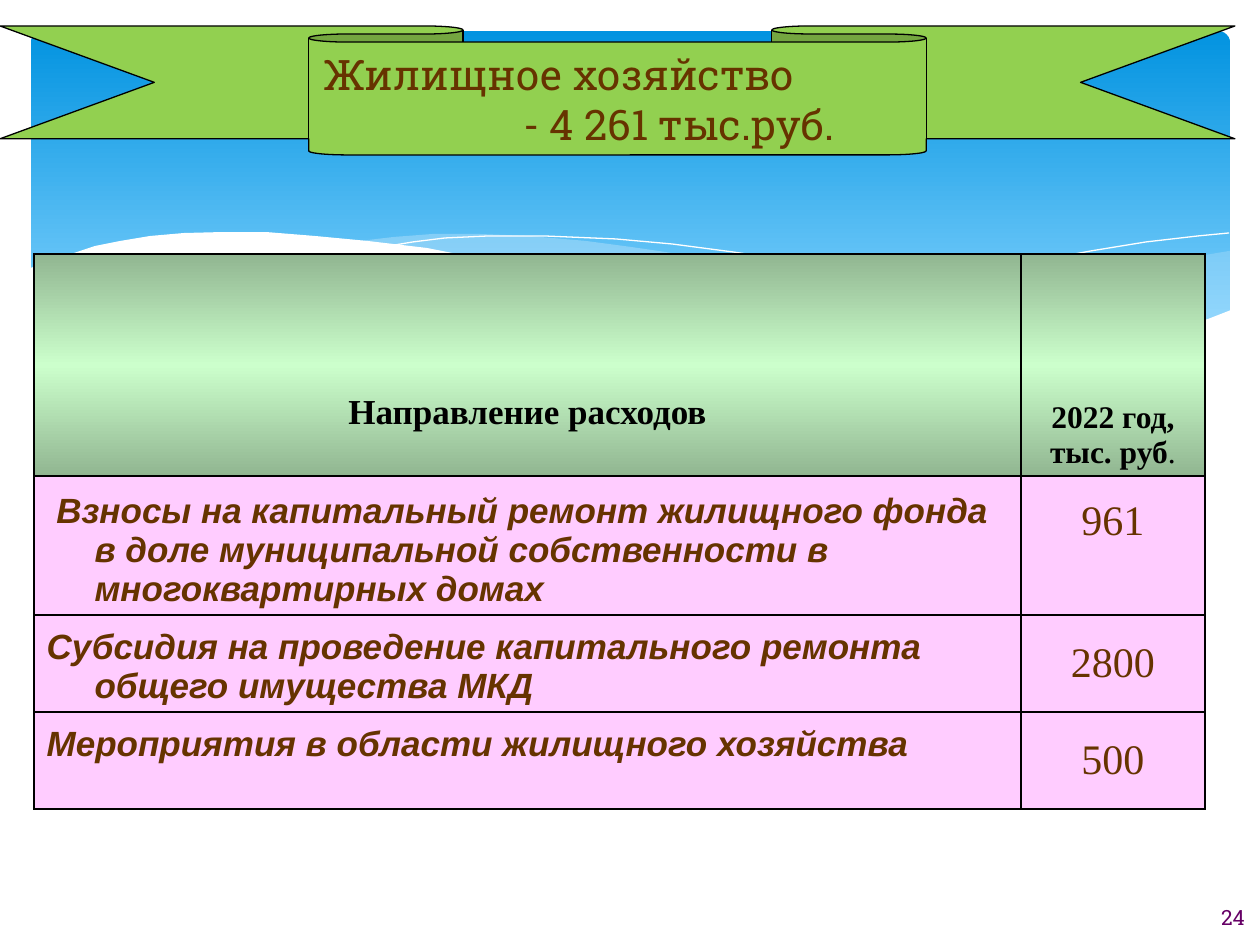
from dataclasses import dataclass

from lxml import etree
from pptx import Presentation
from pptx import util as u
from pptx.dml.color import RGBColor
from pptx.enum import shapes, text
from pptx.oxml import ns

SCALE = 914400 / 126
LEFT, MID = text.PP_ALIGN.LEFT, text.PP_ALIGN.CENTER
LOW, CORE = text.MSO_ANCHOR.BOTTOM, text.MSO_ANCHOR.MIDDLE


@dataclass(frozen=True)
class Theme:
    sky: str = "0293E0"
    pale: str = "83D3FE"
    mist: str = "C6E7FC"
    white: str = "FFFFFF"
    black: str = "000000"
    green: str = "92D050"
    mint: str = "CCFFCC"
    pink: str = "FFCCFF"
    brown: str = "663300"
    plum: str = "660066"
    slab: str = "Roboto Slab"
    serif: str = "Times New Roman"
    sans: str = "Arial"
    big: int = 24
    body: int = 20
    small: int = 18
    tiny: int = 12


def px(n):
    return u.Emu(round(n * SCALE))


def rgb(code):
    return RGBColor.from_string(code)


def node(root, tag, **attrs):
    return etree.SubElement(root, ns.qn(tag), {k: str(v) for k, v in attrs.items()})


def tint(root, code, **mods):
    color = node(root, "a:srgbClr", val=code)
    for name, val in mods.items():
        node(color, "a:" + name, val=val)


def blend(fill, root, stops):
    fill.background()
    old = root.find(ns.qn("a:noFill"))
    grad = etree.Element(ns.qn("a:gradFill"), rotWithShape="1")
    marks = node(grad, "a:gsLst")
    for pos, code, mods in stops:
        tint(node(marks, "a:gs", pos=pos * 1000), code, **mods)
    node(grad, "a:lin", ang=5400000, scaled=0)
    root.replace(old, grad)


def write(frame, words, size, font, color, bold=False, slant=False,
          align=MID, hang=48, inset=0):
    for i, line in enumerate(words.split("\n")):
        para = frame.paragraphs[0] if i == 0 else frame.add_paragraph()
        para.alignment = align
        props = para._p.get_or_add_pPr()
        props.set("marL", str(px(hang + inset)))
        props.set("indent", str(px(-hang)))
        para.text = line
        for run in para.runs:
            face = run.font
            face.size, face.name = u.Pt(size), font
            face.bold, face.italic = bold, slant
            face.color.rgb = rgb(color)


class Deck:
    def __init__(self, theme):
        self.theme = theme
        self.file = Presentation()
        self.file.slide_width, self.file.slide_height = px(1260), px(945)
        self.slide = self.file.slides.add_slide(self.file.slide_layouts[6])

    def shape(self, kind, box, adj, fill=None, line=None):
        item = self.slide.shapes.add_shape(kind, *map(px, box))
        item.shadow.inherit = False
        for i, val in enumerate(adj):
            item.adjustments[i] = val
        if fill:
            item.fill.solid()
            item.fill.fore_color.rgb = rgb(fill)
        if line:
            item.line.color.rgb = rgb(line)
            item.line.width = u.Pt(0.75)
        else:
            item.line.fill.background()
        return item

    def wave(self, points, fill=None, alpha=100):
        pen = self.slide.shapes.build_freeform(*points[0], scale=SCALE)
        pen.add_line_segments(points[1:], close=bool(fill))
        item = pen.convert_to_shape()
        item.shadow.inherit = False
        if fill:
            item.fill.solid()
            item.fill.fore_color.rgb = rgb(fill)
            color = item._element.spPr.find(".//" + ns.qn("a:srgbClr"))
            node(color, "a:alpha", val=alpha * 1000)
            item.line.fill.background()
        else:
            item.fill.background()
            item.line.color.rgb = rgb(self.theme.white)
            item.line.width = 0

    def table(self, left, top, cols, rows):
        grid = self.slide.shapes.add_table(
            len(rows), len(cols), px(left), px(top), px(sum(cols)), px(sum(rows))).table
        grid.first_row = grid.horz_banding = False
        for col, wide in zip(grid.columns, cols):
            col.width = px(wide)
        for row, high in zip(grid.rows, rows):
            row.height = px(high)
        return grid

    def cell(self, cell, words, anchor, pad=0, stops=None, **style):
        props = cell._tc.get_or_add_tcPr()
        for side in "LRTB":
            edge = node(props, "a:ln" + side, w=u.Pt(1))
            tint(node(edge, "a:solidFill"), self.theme.black)
        if stops:
            blend(cell.fill, props, stops)
        else:
            cell.fill.solid()
            cell.fill.fore_color.rgb = rgb(self.theme.pink)
        cell.vertical_anchor = anchor
        cell.margin_bottom = px(6 + pad)
        write(cell.text_frame, words, **style)

    def label(self, box, words, **style):
        frame = self.slide.shapes.add_textbox(*map(px, box)).text_frame
        frame.word_wrap = True
        write(frame, words, **style)


def main():
    t = Theme()
    deck = Deck(t)

    sky = deck.shape(shapes.MSO_SHAPE.ROUNDED_RECTANGLE, (31, 31, 1199, 340), [0.034])
    blend(sky.fill, sky._element.spPr, [(0, t.sky, {}), (90, t.pale, {})])

    deck.wave([
        (1229, 251), (1194, 257), (1142, 268), (1085, 281), (1014, 299), (949, 314),
        (889, 324), (833, 334), (870, 339), (922, 345), (969, 349), (1026, 350),
        (1076, 348), (1120, 343), (1160, 337), (1196, 326), (1213, 318), (1230, 311),
        (1230, 251)], t.mist, 29)
    deck.wave([
        (1125, 344), (1091, 339), (1017, 328), (934, 312), (842, 291), (793, 280),
        (736, 266), (699, 258), (665, 252), (631, 247), (586, 241), (529, 236),
        (479, 234), (433, 234), (394, 237), (360, 241), (407, 247), (456, 256),
        (509, 266), (566, 280), (619, 292), (668, 302), (713, 312), (757, 321),
        (799, 329), (838, 335), (893, 343), (942, 348), (989, 350), (1043, 350),
        (1092, 348)], t.mist, 40)
    deck.wave([
        (389, 246), (413, 242), (445, 238), (488, 236), (545, 236), (616, 239),
        (672, 244), (733, 252), (801, 262), (876, 276), (958, 294), (1047, 316),
        (1143, 343)])
    deck.wave([
        (772, 324), (822, 310), (876, 296), (942, 281), (1016, 265), (1091, 251),
        (1146, 242), (1198, 236), (1229, 233)])
    deck.wave([
        (1231, 310), (1208, 319), (1184, 326), (1147, 336), (1103, 344), (1055, 348),
        (1000, 348), (937, 345), (867, 338), (788, 325), (699, 309), (634, 294),
        (563, 277), (493, 261), (427, 248), (368, 241), (315, 236), (266, 232),
        (223, 232), (184, 233), (150, 236), (120, 241), (95, 246), (74, 253),
        (58, 258), (45, 264), (30, 268), (30, 415), (1231, 415)], t.white)

    band = deck.shape(shapes.MSO_SHAPE.DOWN_RIBBON, (0, 26, 1235, 129),
                      [0.125, 0.5], t.green, t.black)
    band.text_frame.vertical_anchor = CORE
    write(band.text_frame, "Жилищное хозяйство\v- 4 261 тыс.руб.", size=t.big,
          font=t.slab, color=t.brown, align=LEFT, hang=200, inset=2)

    grid = deck.table(34, 254, [987, 184], [222, 139, 97, 97])
    shade = {"shade": 46275}
    stops = [(0, t.mint, shade), (50, t.mint, {}), (100, t.mint, shade)]
    head = dict(anchor=LOW, stops=stops, font=t.serif, color=t.black, bold=True)
    deck.cell(grid.cell(0, 0), "Направление расходов", pad=38, size=t.body, **head)
    deck.cell(grid.cell(0, 1), "2022 год,\nтыс. руб.", size=t.small, **head)
    last = grid.cell(0, 1).text_frame.paragraphs[1]
    last.runs[0].text = "тыс. руб"
    dot = last.add_run()
    dot.text = "."
    dot.font.size, dot.font.name, dot.font.bold = u.Pt(t.small), t.serif, False
    dot.font.color.rgb = rgb(t.black)

    costs = [
        (" Взносы на капитальный ремонт жилищного фонда в доле муниципальной "
         "собственности в многоквартирных домах", 0, "961", 48),
        ("Субсидия на проведение капитального ремонта общего имущества МКД", 0, "2800", 0),
        ("Мероприятия в области жилищного хозяйства", 39, "500", 0),
    ]
    for i, (name, gap, cost, lift) in enumerate(costs, 1):
        deck.cell(grid.cell(i, 0), name, LOW, gap, size=t.body, font=t.sans,
                  color=t.brown, bold=True, slant=True, align=LEFT)
        deck.cell(grid.cell(i, 1), cost, CORE, lift, size=t.big, font=t.serif,
                  color=t.brown)

    deck.label((1186, 898, 94, 38), "24", size=t.tiny, font=t.slab, color=t.plum)
    deck.file.save("out.pptx")


if __name__ == "__main__":
    main()
